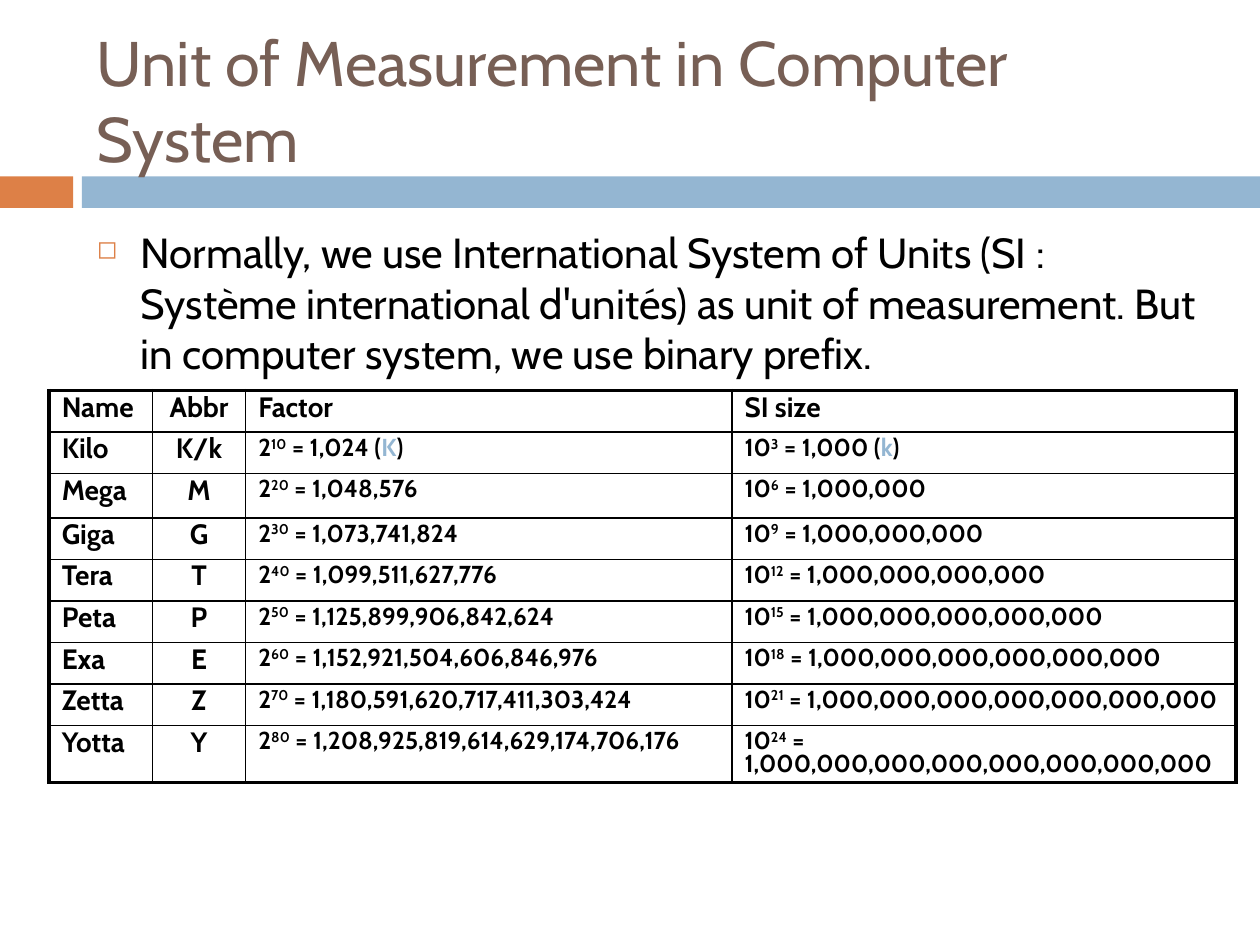
from lxml.etree import SubElement
from pptx import Presentation
from pptx.dml.color import RGBColor
from pptx.enum.shapes import MSO_SHAPE
from pptx.enum.text import MSO_ANCHOR, PP_ALIGN
from pptx.oxml.ns import qn
from pptx.util import Inches, Pt

TITLE = "Unit of Measurement in Computer System"
BODY = ("Normally, we use International System of Units (SI : Système "
        "international d'unités) as unit of measurement. But in computer "
        "system, we use binary prefix.")
HEADERS = ["Name", "Abbr", "Factor", "SI size"]
PREFIXES = [("Kilo", "K/k"), ("Mega", "M"), ("Giga", "G"), ("Tera", "T"),
            ("Peta", "P"), ("Exa", "E"), ("Zetta", "Z"), ("Yotta", "Y")]
KILO_SYMBOLS = {2: "K", 10: "k"}

THEME = {
    "font": "Cabin",
    "title": "775F55", "text": "000000", "orange": "DD8047", "blue": "94B6D2",
    "title_size": 36, "body_size": 24, "label_size": 16, "value_size": 14,
    "inner_line": 1, "outer_line": 2.25,
}
BARS = [(0, 0.58, "orange"), (0.65, 9.35, "blue")]
COL_WIDTHS = [0.82, 0.74, 3.86, 4]
ROW_HEIGHTS = [0.33, 0.33, 0.35] + [0.33] * 6


def add_run(p, text, size, color="text", bold=False, superscript=False):
    r = p.add_run()
    r.text = text
    r.font.name = THEME["font"]
    r.font.size = Pt(THEME[size])
    r.font.bold = bold
    r.font.color.rgb = RGBColor.from_string(THEME[color])
    if superscript:
        r.font._element.set("baseline", "30000")


def add_bar(slide, left, width, color):
    sp = slide.shapes.add_shape(MSO_SHAPE.RECTANGLE, Inches(left), Inches(1.4),
                                Inches(width), Inches(0.25))
    sp.shadow.inherit = False
    sp.fill.solid()
    sp.fill.fore_color.rgb = RGBColor.from_string(THEME[color])
    sp.line.fill.background()


def add_text(slide, top, height, anchor, text, size, color):
    sp = slide.shapes.add_textbox(Inches(0.67), Inches(top), Inches(8.92), Inches(height))
    tf = sp.text_frame
    tf.word_wrap = True
    tf.vertical_anchor = anchor
    p = tf.paragraphs[0]
    add_run(p, text, size, color)
    return p


def add_bullet(p):
    p.space_before = Pt(7)
    pPr = p._p.get_or_add_pPr()
    pPr.set("marL", str(Inches(0.35)))
    pPr.set("indent", str(-Inches(0.35)))
    color = SubElement(pPr, qn("a:buClr"))
    SubElement(color, qn("a:srgbClr"), val=THEME["orange"])
    SubElement(pPr, qn("a:buSzPct"), val="60000")
    SubElement(pPr, qn("a:buChar"), char="◻")


def set_borders(cell, outer_sides):
    tcPr = cell._tc.get_or_add_tcPr()
    for side in "LRTB":
        width = THEME["outer_line" if side in outer_sides else "inner_line"]
        ln = SubElement(tcPr, qn(f"a:ln{side}"), w=str(Pt(width)))
        fill = SubElement(ln, qn("a:solidFill"))
        SubElement(fill, qn("a:srgbClr"), val=THEME["text"])


def add_power(p, base, exponent):
    """Write a power and its value; 2^10 and 10^3 also get their symbol."""
    add_run(p, str(base), "value_size", bold=True)
    add_run(p, str(exponent), "value_size", bold=True, superscript=True)
    value = f" = {base ** exponent:,}"
    if (base, exponent) in ((2, 10), (10, 3)):
        add_run(p, value + " (", "value_size", bold=True)
        add_run(p, KILO_SYMBOLS[base], "value_size", "blue", bold=True)
        add_run(p, ")", "value_size", bold=True)
    else:
        add_run(p, value, "value_size", bold=True)


def add_units_table(slide):
    rows = [HEADERS] + [[name, abbr, (2, 10 * n), (10, 3 * n)]
                        for n, (name, abbr) in enumerate(PREFIXES, 1)]
    last_row, last_col = len(rows) - 1, len(HEADERS) - 1
    table = slide.shapes.add_table(
        len(rows), len(HEADERS), Inches(0.39), Inches(3.1),
        Inches(sum(COL_WIDTHS)), Inches(sum(ROW_HEIGHTS))).table
    table.first_row = table.horz_banding = False
    for column, width in zip(table.columns, COL_WIDTHS):
        column.width = Inches(width)
    for row, height in zip(table.rows, ROW_HEIGHTS):
        row.height = Inches(height)

    for i, row in enumerate(rows):
        for j, content in enumerate(row):
            cell = table.cell(i, j)
            edges = {"L": j == 0, "R": j == last_col, "T": i == 0, "B": i == last_row}
            set_borders(cell, [side for side, outer in edges.items() if outer])
            cell.fill.background()
            p = cell.text_frame.paragraphs[0]
            p.alignment = PP_ALIGN.CENTER if j == 1 else PP_ALIGN.LEFT
            p.line_spacing = 0.75
            before = SubElement(p._p.get_or_add_pPr(), qn("a:spcBef"))
            SubElement(before, qn("a:spcPct"), val="65000")
            if isinstance(content, tuple):
                add_power(p, *content)
            else:
                add_run(p, content, "label_size", bold=True)


def main():
    prs = Presentation()
    prs.slide_width, prs.slide_height = Inches(10), Inches(7.5)
    slide = prs.slides.add_slide(prs.slide_layouts[6])
    for bar in BARS:
        add_bar(slide, *bar)
    add_text(slide, 0.25, 1.08, MSO_ANCHOR.MIDDLE, TITLE, "title_size", "title")
    add_bullet(add_text(slide, 1.75, 4.92, MSO_ANCHOR.TOP, BODY, "body_size", "text"))
    add_units_table(slide)
    prs.save("out.pptx")


if __name__ == "__main__":
    main()
